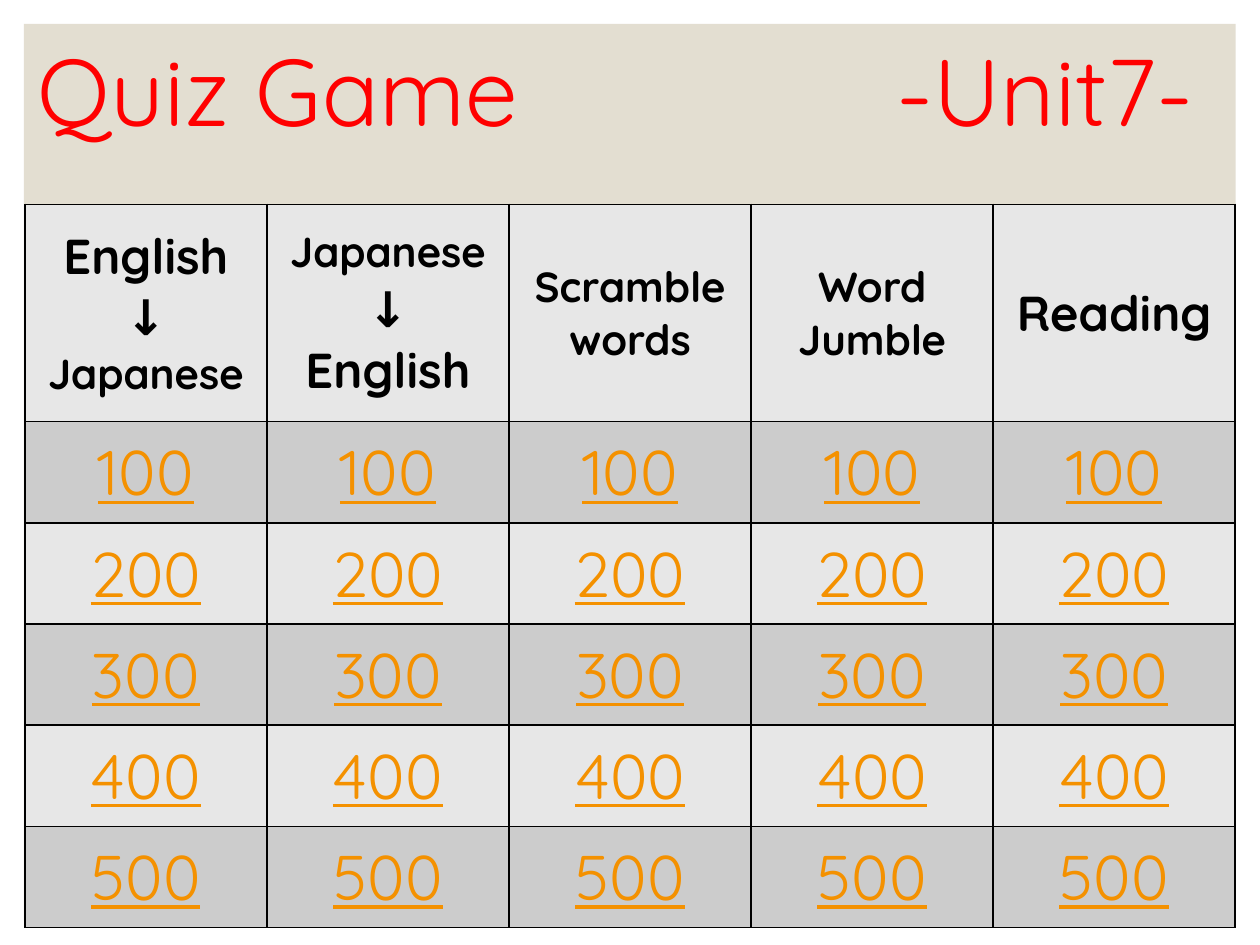
from pptx import Presentation
from pptx.dml.color import RGBColor
from pptx.enum.shapes import MSO_SHAPE as Shape
from pptx.enum.text import MSO_ANCHOR as Anchor, PP_ALIGN as Align
from pptx.oxml.ns import qn
from pptx.util import Cm, Pt
from lxml.etree import SubElement

HEADERS = [
    [("English", 28), ("↓", 28), ("Japanese", 24)],
    [("Japanese", 24), ("↓", 28), ("English", 28)],
    [("Scramble words", 24)],
    [("Word Jumble", 24)],
    [("Reading", 28)],
]
POINTS = range(100, 501, 100)
HEADER_FORMAT = {"bold": True}
POINTS_FORMAT = {"bold": False, "underline": True}


def color(value):
    return RGBColor.from_string(value)


class Board:
    font = "Quicksand"
    black, red, orange = "000000", "FF0000", "F49100"
    panel_fill = "E3DED1"
    row_fills = ("E7E7E7", "CCCCCC")

    def __init__(self, presentation):
        self.slide = presentation.slides.add_slide(presentation.slide_layouts[5])

    def place(self, shape, left, top, width, height):
        box = {"left": left, "top": top, "width": width, "height": height}
        for name, value in box.items():
            setattr(shape, name, Cm(value))

    def add_text(self, paragraph, text, size, text_color, extra):
        run = paragraph.add_run()
        run.text = text
        for name, value in {"name": self.font, "size": Pt(size), **extra}.items():
            setattr(run.font, name, value)
        run.font.color.rgb = color(text_color)

    def panel(self, left, top, width, height):
        shape = self.slide.shapes.add_shape(
            Shape.RECTANGLE, Cm(left), Cm(top), Cm(width), Cm(height))
        shape.shadow.inherit = False
        shape.fill.solid()
        shape.fill.fore_color.rgb = color(self.panel_fill)
        shape.line.fill.background()

    def title(self, text, tab, *box):
        shape = self.slide.shapes.title
        self.place(shape, *box)
        shape.text_frame.vertical_anchor = Anchor.MIDDLE
        paragraph = shape.text_frame.paragraphs[0]
        paragraph.alignment = Align.LEFT
        paragraph.line_spacing = 0.9
        tabs = SubElement(paragraph._p.get_or_add_pPr(), qn("a:tabLst"))
        SubElement(tabs, qn("a:tab"), pos=str(Cm(tab)), algn="r")
        self.add_text(paragraph, text, 54, self.red, {})
        self.slide.shapes._spTree.append(shape._element)

    def borders(self, cell):
        properties = cell._tc.get_or_add_tcPr()
        for side in ("lnL", "lnR", "lnT", "lnB"):
            line = SubElement(properties, qn(f"a:{side}"), w=str(Pt(1)))
            fill = SubElement(line, qn("a:solidFill"))
            SubElement(fill, qn("a:srgbClr"), val=self.black)

    def cell(self, cell, lines, fill, text_color, extra):
        self.borders(cell)
        cell.fill.solid()
        cell.fill.fore_color.rgb = color(fill)
        cell.vertical_anchor = Anchor.MIDDLE
        frame = cell.text_frame
        for index, (text, size) in enumerate(lines):
            paragraph = frame.add_paragraph() if index else frame.paragraphs[0]
            paragraph.alignment = Align.CENTER
            self.add_text(paragraph, text, size, text_color, extra)

    def table(self, left, top, width, header_height, row_height):
        count = len(HEADERS)
        height = header_height + row_height * len(POINTS)
        table = self.slide.shapes.add_table(
            len(POINTS) + 1, count, Cm(left), Cm(top), Cm(width), Cm(height)).table
        for column in table.columns:
            column.width = Cm(width / count)
        for row in table.rows:
            row.height = Cm(row_height)
        table.rows[0].height = Cm(header_height)
        for column, lines in enumerate(HEADERS):
            self.cell(table.cell(0, column), lines, self.row_fills[0],
                      self.black, HEADER_FORMAT)
            for row, points in enumerate(POINTS, start=1):
                self.cell(table.cell(row, column), [(str(points), 36)],
                          self.row_fills[row % 2], self.orange, POINTS_FORMAT)


def main():
    presentation = Presentation()
    presentation.slide_width, presentation.slide_height = Cm(25.4), Cm(19.05)
    board = Board(presentation)
    board.panel(0.48, 0.48, 24.43, 18.08)
    board.title("Quiz Game\t-Unit7-", 23.3, 0.5, 0.76, 24.4, 2.36)
    board.table(0.5, 4.12, 24.4, 4.38, 2.04)
    presentation.save("out.pptx")


if __name__ == "__main__":
    main()
